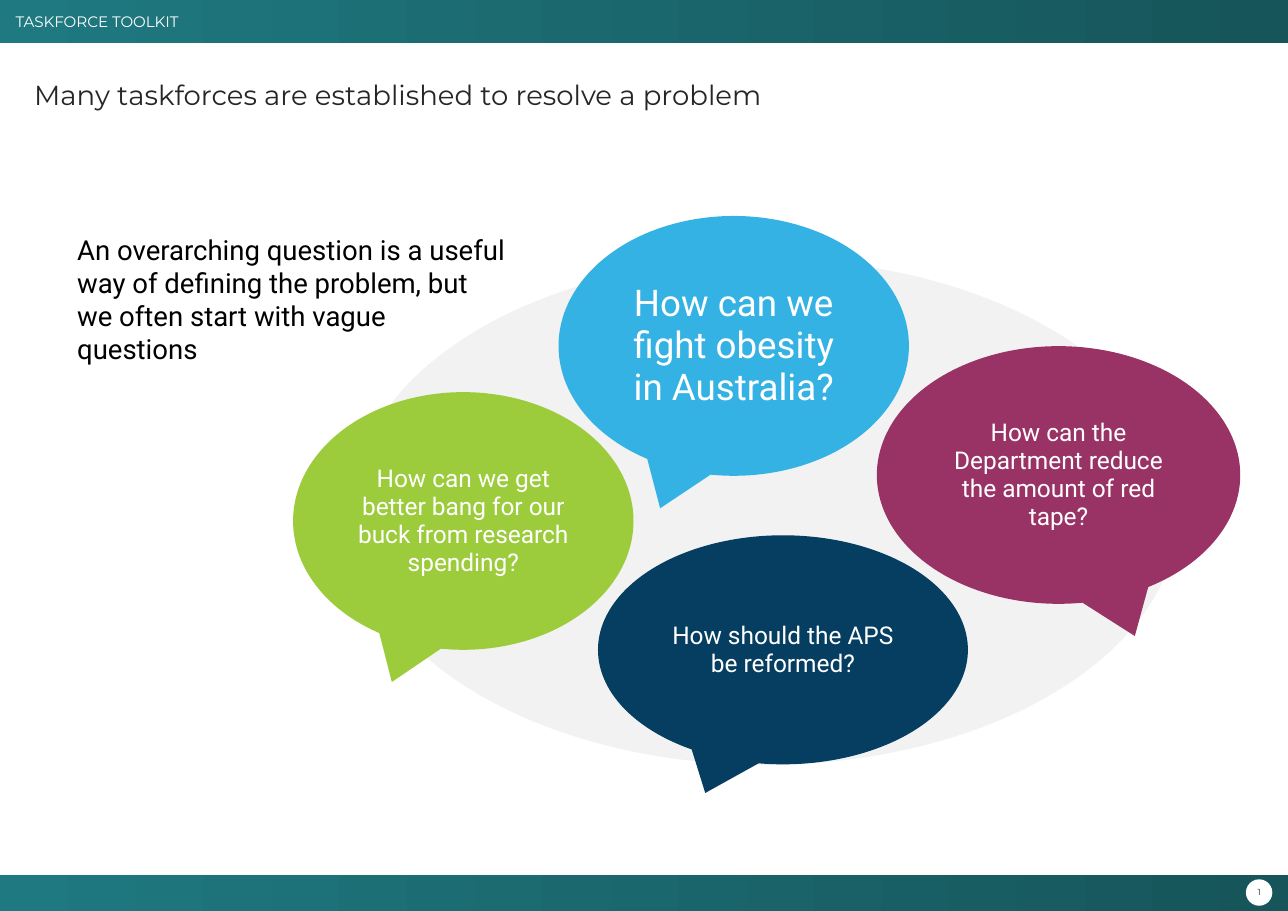
from dataclasses import dataclass

from pptx import Presentation
from pptx.dml.color import RGBColor
from pptx.enum.shapes import MSO_SHAPE
from pptx.enum.text import MSO_ANCHOR, PP_ALIGN
from pptx.util import Cm, Pt

RECTANGLE, ELLIPSE = MSO_SHAPE.RECTANGLE, MSO_SHAPE.OVAL
SPEECH_BUBBLE = MSO_SHAPE.OVAL_CALLOUT
LEFT, CENTER = PP_ALIGN.LEFT, PP_ALIGN.CENTER
TOP, MIDDLE = MSO_ANCHOR.TOP, MSO_ANCHOR.MIDDLE


@dataclass(frozen=True)
class Theme:
    heading_font: str = "Montserrat"
    body_font: str = "Roboto"
    white: str = "FFFFFF"
    black: str = "000000"
    title_grey: str = "262626"
    number_grey: str = "222A35"
    backdrop_grey: str = "F2F2F2"
    band_start: str = "1F7980"
    band_end: str = "16555A"
    green: str = "9CCB3C"
    purple: str = "993366"
    navy: str = "053E60"
    blue: str = "34B2E3"
    number_size: float = 5.7
    header_size: float = 9.9
    question_size: float = 16
    text_size: float = 18
    main_question_size: float = 24


THEME = Theme()

SLIDE_WIDTH, SLIDE_HEIGHT = 29.7, 21
HEADER_HEIGHT, FOOTER_HEIGHT = 1, 0.83

# Boxes are left, top, width, height in centimetres.
HEADER_BOX = (0, 0, SLIDE_WIDTH, HEADER_HEIGHT)
FOOTER_BOX = (0, SLIDE_HEIGHT - FOOTER_HEIGHT, SLIDE_WIDTH, FOOTER_HEIGHT)
TITLE_BOX = (0.79, 1.73, 19.84, 1.88)
INTRO_BOX = (1.78, 5.36, 9.98, 2.31)
CLOUD_BOX = (6.76, 4.98, 21.84, 12.65)

# Offset within the cloud, size, colour, type size, side of the tail, question.
QUESTIONS = [
    ((0, 4.06, 7.85, 5.94), THEME.green, THEME.question_size, -1,
     "How can we get better bang for our buck from research spending?"),
    ((13.46, 3, 8.38, 5.94), THEME.purple, THEME.question_size, 1,
     "How can the Department reduce the amount of red tape?"),
    ((7.03, 7.36, 8.53, 5.28), THEME.navy, THEME.question_size, -1,
     "How should the APS be reformed?"),
    ((6.12, 0, 8.08, 5.99), THEME.blue, THEME.main_question_size, -1,
     "How can we fight obesity in Australia?"),
]


def to_cm(box):
    return [Cm(length) for length in box]


def within(outer, inner):
    """Turn a box relative to outer into a box on the slide."""
    return (outer[0] + inner[0], outer[1] + inner[1], *inner[2:])


def write(shape, text, font, size, color, align=LEFT, anchor=TOP,
          insets=(0, 0, 0, 0), spacing=1.0, wrap=True):
    frame = shape.text_frame
    frame.word_wrap = wrap
    frame.vertical_anchor = anchor
    (frame.margin_left, frame.margin_top,
     frame.margin_right, frame.margin_bottom) = to_cm(insets)
    paragraph = frame.paragraphs[0]
    paragraph.text = text
    paragraph.alignment = align
    paragraph.line_spacing = spacing
    paragraph.font.name = font
    paragraph.font.size = Pt(size)
    paragraph.font.color.rgb = RGBColor.from_string(color)


def add_plain_shape(slide, kind, box, color=None):
    shape = slide.shapes.add_shape(kind, *to_cm(box))
    shape.shadow.inherit = False
    shape.line.fill.background()
    if color:
        shape.fill.solid()
        shape.fill.fore_color.rgb = RGBColor.from_string(color)
    return shape


def add_band(slide, box):
    band = add_plain_shape(slide, RECTANGLE, box)
    band.fill.gradient()
    band.fill.gradient_angle = 0
    ends = (THEME.band_start, THEME.band_end)
    for position, (stop, color) in enumerate(zip(band.fill.gradient_stops, ends)):
        stop.position = position
        stop.color.rgb = RGBColor.from_string(color)
    return band


def add_header(slide, box):
    write(add_band(slide, box), "TASKFORCE TOOLKIT", THEME.heading_font,
          THEME.header_size, THEME.white, anchor=MIDDLE,
          insets=(0.36, 0.15, 0.18, 0.15))


def add_footer(slide, box):
    add_band(slide, box)
    badge_box = within(box, (box[2] - 0.97, 0.1, 0.61, 0.61))
    badge = add_plain_shape(slide, ELLIPSE, badge_box, THEME.white)
    write(badge, "1", THEME.heading_font, THEME.number_size,
          THEME.number_grey, CENTER, MIDDLE, wrap=False)


def add_title(slide, box):
    write(slide.shapes.add_textbox(*to_cm(box)),
          "Many taskforces are established to resolve a problem",
          THEME.heading_font, THEME.text_size, THEME.title_grey, spacing=1.1)


def add_question_cloud(slide, box):
    """Place the speech bubbles over a pale ellipse."""
    backdrop_box = within(box, (1.34, 0.99, 19.08, 11.66))
    add_plain_shape(slide, ELLIPSE, backdrop_box, THEME.backdrop_grey)
    for offset, color, size, tail_side, question in QUESTIONS:
        bubble = add_plain_shape(slide, SPEECH_BUBBLE, within(box, offset), color)
        bubble.adjustments[0] = tail_side * 0.21
        bubble.adjustments[1] = 0.625
        write(bubble, question, THEME.body_font, size, THEME.white, CENTER,
              MIDDLE, insets=(0.25, 0.13, 0.25, 0.13), spacing=0.95)


def add_intro(slide, box):
    write(slide.shapes.add_textbox(*to_cm(box)),
          "An overarching question is a useful way of defining the problem, "
          "but we often start with vague questions",
          THEME.body_font, THEME.text_size, THEME.black)


def main():
    presentation = Presentation()
    presentation.slide_width = Cm(SLIDE_WIDTH)
    presentation.slide_height = Cm(SLIDE_HEIGHT)
    slide = presentation.slides.add_slide(presentation.slide_layouts[6])
    add_header(slide, HEADER_BOX)
    add_footer(slide, FOOTER_BOX)
    add_title(slide, TITLE_BOX)
    add_question_cloud(slide, CLOUD_BOX)
    add_intro(slide, INTRO_BOX)
    presentation.save("out.pptx")


if __name__ == "__main__":
    main()
